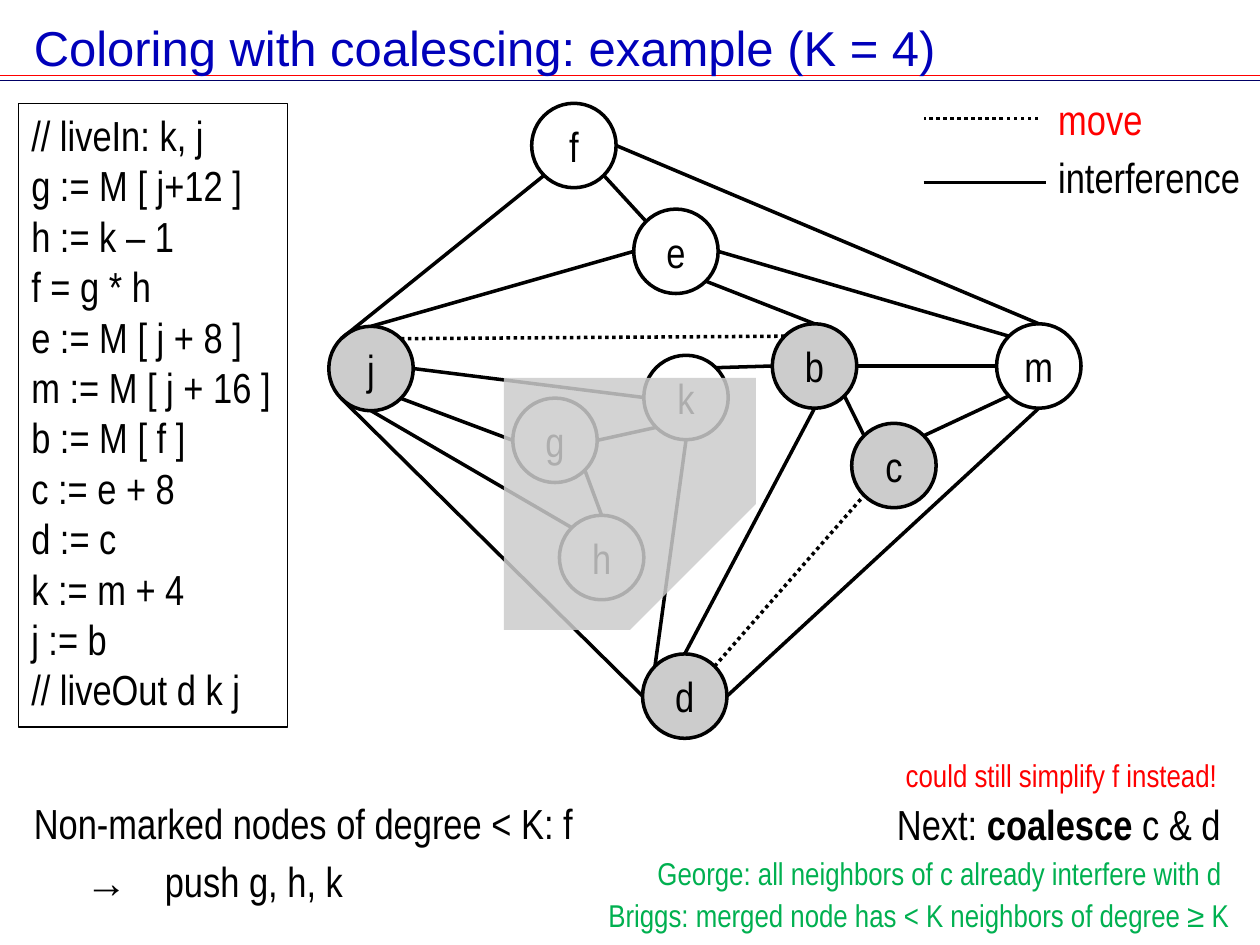
from dataclasses import dataclass
from math import cos, radians, sin
from typing import Optional

from lxml import etree
from pptx import Presentation
from pptx.dml.color import RGBColor
from pptx.enum.dml import MSO_LINE
from pptx.enum.shapes import MSO_CONNECTOR, MSO_SHAPE
from pptx.enum.text import MSO_ANCHOR, PP_ALIGN
from pptx.oxml.ns import qn
from pptx.util import Inches, Pt

BLACK = RGBColor(0x00, 0x00, 0x00)
RED = RGBColor(0xFF, 0x00, 0x00)
NAVY = RGBColor(0x00, 0x00, 0x66)
BLUE = RGBColor(0x00, 0x00, 0xBA)
GREEN = RGBColor(0x00, 0xB0, 0x50)
GRAY = RGBColor(0xCC, 0xCC, 0xCC)
DOTTED = MSO_LINE.ROUND_DOT
STRAIGHT = MSO_CONNECTOR.STRAIGHT
OVAL = MSO_SHAPE.OVAL
RECTANGLE = MSO_SHAPE.RECTANGLE
CENTER = PP_ALIGN.CENTER
LEFT = PP_ALIGN.LEFT
MIDDLE = MSO_ANCHOR.MIDDLE
TOP = MSO_ANCHOR.TOP
NARROW = "Arial Narrow"
DIAMETER = 0.67
COMPASS = {name: radians(45 * step) for step, name in
           enumerate(("e", "se", "s", "sw", "w", "nw", "n", "ne"))}


@dataclass(frozen=True)
class Node:
    left: float
    top: float
    marked: bool = False

    def site(self, direction: str) -> tuple[float, float]:
        radius, angle = DIAMETER / 2, COMPASS[direction]
        return (self.left + radius + radius * cos(angle),
                self.top + radius + radius * sin(angle))


@dataclass(frozen=True)
class Edge:
    start: str
    start_side: str
    end: str
    end_side: str
    move: bool = False


@dataclass(frozen=True)
class Label:
    text: str
    left: float
    top: float
    width: float
    height: float = 0.5
    size: int = 24
    color: RGBColor = BLACK
    font: str = NARROW
    wrap: bool = False
    anchor: MSO_ANCHOR = TOP
    bold_word: Optional[str] = None


CODE = (
    "// liveIn: k, j", "g := M [ j+12 ]", "h := k – 1", "f = g * h",
    "e := M [ j + 8 ]", "m := M [ j + 16 ]", "b := M [ f ]", "c := e + 8",
    "d := c", "k := m + 4", "j := b", "// liveOut d k j",
)
NODES = {
    "k": Node(5.11, 2.82), "j": Node(2.61, 2.59, True),
    "b": Node(6.13, 2.57, True), "d": Node(5.1, 5.19, True),
    "h": Node(4.44, 4.09), "g": Node(4.07, 3.16),
    "e": Node(5.03, 1.66), "f": Node(4.22, 0.82),
    "c": Node(6.76, 3.36, True), "m": Node(7.91, 2.57),
}
EDGES = (
    Edge("j", "nw", "f", "sw"), Edge("j", "n", "e", "w"),
    Edge("e", "nw", "f", "se"), Edge("m", "n", "f", "e"),
    Edge("m", "nw", "e", "e"), Edge("k", "w", "j", "e"),
    Edge("b", "w", "k", "ne"), Edge("b", "e", "m", "w"),
    Edge("d", "w", "j", "sw"), Edge("d", "nw", "k", "s"),
    Edge("d", "n", "b", "s"), Edge("g", "se", "h", "n"),
    Edge("c", "ne", "m", "sw"), Edge("m", "s", "d", "e"),
    Edge("g", "e", "k", "sw"), Edge("j", "se", "g", "w"),
    Edge("h", "nw", "j", "s"), Edge("c", "nw", "b", "se"),
    Edge("b", "n", "e", "se"),
    Edge("d", "ne", "c", "sw", True), Edge("b", "nw", "j", "ne", True),
)
TITLE = Label("Coloring with coalescing: example (K = 4)", 0.17, 0.08, 9.7,
              0.59, 28, BLUE, "Arial", True, MIDDLE)
LABELS = (
    Label("move", 8.3, 0.69, 0.88, color=RED),
    Label("interference", 8.3, 1.15, 1.66),
    Label("Non-marked nodes of degree < K: f", 0.17, 6.28, 4.61),
    Label("→", 0.58, 6.79, 0.53),
    Label("push g, h, k", 1.21, 6.74, 1.64),
    Label("Next: coalesce c & d", 7.02, 6.29, 2.98, wrap=True,
          bold_word="coalesce"),
    Label("could still simplify f instead!", 7.09, 5.95, 2.7, 0.4, 18, RED),
    Label("George: all neighbors of c already interfere with d",
          5.12, 6.73, 4.74, 0.4, 18, GREEN),
    Label("Briggs: merged node has < K neighbors of degree ≥ K",
          4.73, 7.06, 5.23, 0.4, 18, GREEN, wrap=True),
)
VEIL_START = (3.77, 2.71)
VEIL_CORNERS = ((5.96, 2.71), (5.83, 4.16))
VEIL_CURVES = (
    ((5.65, 4.48), (5.25, 4.76), (4.9, 4.84)),
    ((4.56, 4.92), (4.42, 4.72), (4.23, 4.4)),
    ((3.73, 3.53), (3.93, 3.27), VEIL_START),
)


def style_paragraph(para, size: int, color: RGBColor, font: str = NARROW,
                    alignment: PP_ALIGN = LEFT) -> None:
    para.alignment = alignment
    para.font.size = Pt(size)
    para.font.name = font
    para.font.color.rgb = color


def add_label(page, label: Label) -> None:
    box = page.shapes.add_textbox(Inches(label.left), Inches(label.top),
                                  Inches(label.width), Inches(label.height))
    frame = box.text_frame
    frame.word_wrap = label.wrap
    frame.vertical_anchor = label.anchor
    para = frame.paragraphs[0]
    if label.bold_word:
        before, after = label.text.split(label.bold_word)
        for text in (before, label.bold_word, after):
            span = para.add_run()
            span.text = text
            span.font.bold = text == label.bold_word
    else:
        para.text = label.text
    style_paragraph(para, label.size, label.color, label.font)


def add_line(page, start: tuple[float, float], end: tuple[float, float],
             color: RGBColor = BLACK, width: float = 2,
             dotted: bool = False) -> None:
    line = page.shapes.add_connector(STRAIGHT, *map(Inches, start + end))
    line.line.color.rgb = color
    line.line.width = Pt(width)
    if dotted:
        line.line.dash_style = DOTTED
    etree.SubElement(line._element.spPr, qn("a:effectLst"))


def add_outlined(page, kind: MSO_SHAPE, bounds: tuple[float, ...],
                 lines: tuple[str, ...], width: float, alignment: PP_ALIGN,
                 anchor: MSO_ANCHOR, fill: Optional[RGBColor] = None) -> None:
    shape = page.shapes.add_shape(kind, *map(Inches, bounds))
    shape.shadow.inherit = False
    shape.line.color.rgb = BLACK
    shape.line.width = Pt(width)
    if fill is None:
        shape.fill.background()
    else:
        shape.fill.solid()
        shape.fill.fore_color.rgb = fill
    frame = shape.text_frame
    frame.word_wrap = False
    frame.vertical_anchor = anchor
    frame.text = "\n".join(lines)
    for para in frame.paragraphs:
        style_paragraph(para, 24, BLACK, alignment=alignment)


def curve_points(start, first, second, end, steps: int = 16) -> list:
    points = []
    for step in range(1, steps + 1):
        t = step / steps
        weights = ((1 - t) ** 3, 3 * t * (1 - t) ** 2, 3 * t * t * (1 - t), t ** 3)
        points.append(tuple(
            sum(weight * value for weight, value in zip(weights, axis))
            for axis in zip(start, first, second, end)))
    return points


def add_veil(page) -> None:
    points = list(VEIL_CORNERS)
    for curve in VEIL_CURVES:
        points += curve_points(points[-1], *curve)
    builder = page.shapes.build_freeform(*VEIL_START, scale=Inches(1))
    builder.add_line_segments(points, close=True)
    veil = builder.convert_to_shape()
    veil.shadow.inherit = False
    veil.line.fill.background()
    veil.fill.solid()
    veil.fill.fore_color.rgb = GRAY
    color = veil._element.spPr.find(qn("a:solidFill"))[0]
    etree.SubElement(color, qn("a:alpha"), val="85000")


def main() -> None:
    deck = Presentation()
    deck.slide_width, deck.slide_height = Inches(10), Inches(7.5)
    page = deck.slides.add_slide(deck.slide_layouts[6])
    for y, color in ((0.6, RED), (0.64, NAVY)):
        add_line(page, (0, y), (10, y), color, 1)
    add_label(page, TITLE)
    add_outlined(page, RECTANGLE, (0.15, 0.82, 2.13, 4.95), CODE, 0.75, LEFT, TOP)
    for name, node in NODES.items():
        add_outlined(page, OVAL, (node.left, node.top, DIAMETER, DIAMETER),
                     (name,), 2, CENTER, MIDDLE, GRAY if node.marked else None)
    for edge in EDGES:
        add_line(page, NODES[edge.start].site(edge.start_side),
                 NODES[edge.end].site(edge.end_side), dotted=edge.move)
    add_line(page, (8.24, 0.94), (7.33, 0.94), dotted=True)
    add_line(page, (7.33, 1.45), (8.3, 1.45))
    add_veil(page)
    for label in LABELS:
        add_label(page, label)
    deck.save("out.pptx")


if __name__ == "__main__":
    main()
